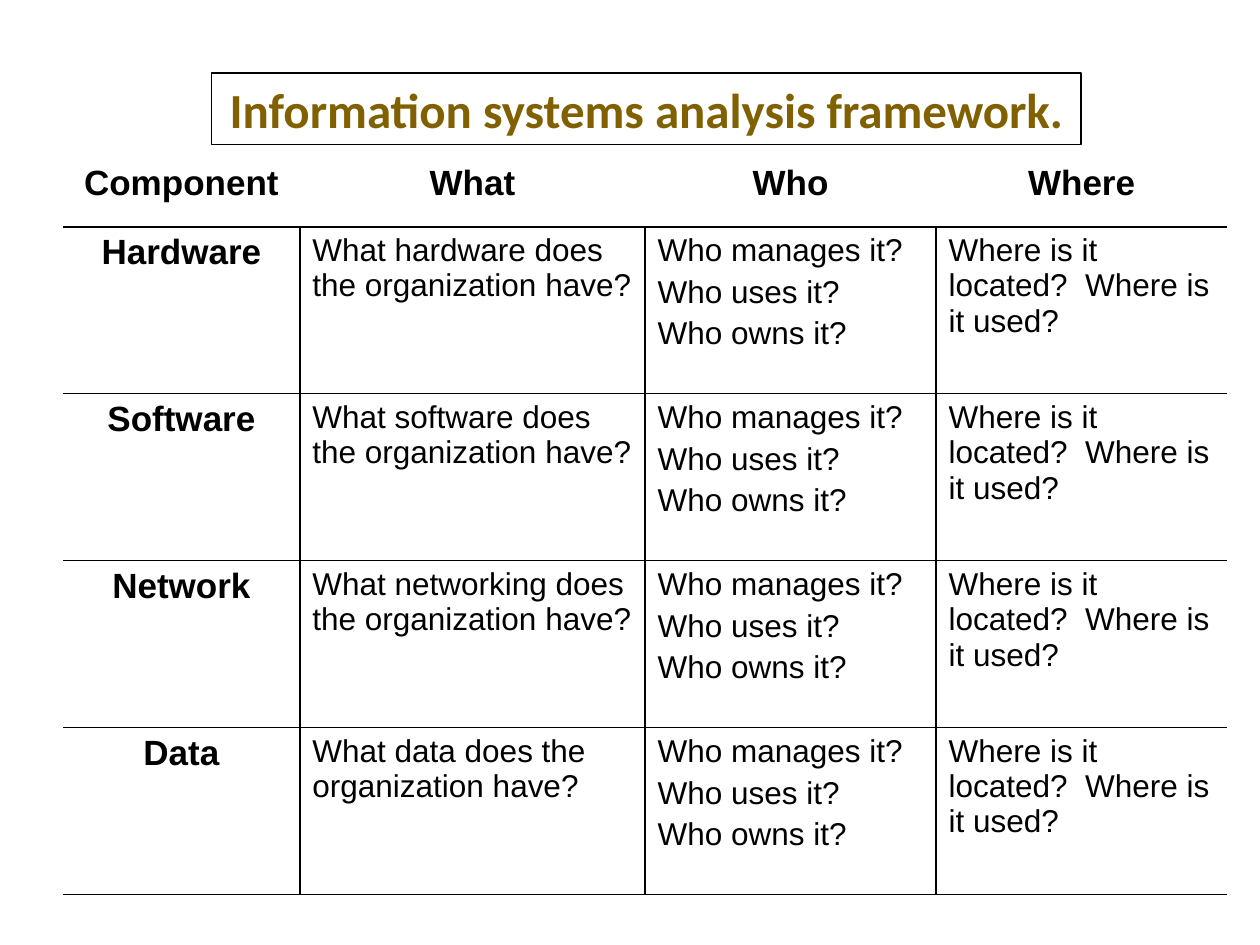
from lxml import etree
from pptx import Presentation
from pptx.dml.color import RGBColor
from pptx.enum import text
from pptx.oxml import ns
from pptx.util import Inches, Pt

COLORS = {"ink": "000000", "title": "806000", "paper": "FFFFFF"}
COLUMN_WIDTHS = [1.88, 2.74, 2.31, 2.31]
HEADER_HEIGHT, ROW_HEIGHT = 0.55, 1.325
HEADINGS = ["Component", "What", "Who", "Where"]
COMPONENTS = {"Hardware": "hardware", "Software": "software",
              "Network": "networking", "Data": "data"}
WHO = ["Who manages it?", "Who uses it?", "Who owns it?"]
WHERE = ["Where is it located?  Where is it used?"]


def set_border(cell, side, visible):
    """Draw or suppress one side (L, R, T or B) of a cell."""
    line = etree.SubElement(cell._tc.get_or_add_tcPr(), ns.qn(f"a:ln{side}"), w=str(Pt(1)))
    if visible:
        fill = etree.SubElement(line, ns.qn("a:solidFill"))
        etree.SubElement(fill, ns.qn("a:srgbClr"), val=COLORS["ink"])
    else:
        etree.SubElement(line, ns.qn("a:noFill"))


deck = Presentation()
deck.slide_width, deck.slide_height = Inches(10), Inches(7.5)
page = deck.slides.add_slide(deck.slide_layouts[5])
page.background.fill.solid()
page.background.fill.fore_color.rgb = RGBColor.from_string(COLORS["paper"])

rows = [[[heading] for heading in HEADINGS]]
for component, subject in COMPONENTS.items():
    rows.append([[component], [f"What {subject} does the organization have?"], WHO, WHERE])

frame = page.shapes.add_table(
    len(rows), len(HEADINGS), Inches(0.5), Inches(1.25),
    Inches(sum(COLUMN_WIDTHS)), Inches(HEADER_HEIGHT + ROW_HEIGHT * len(COMPONENTS)))
table = frame.table
table.first_row = table.horz_banding = False
for column, width in zip(table.columns, COLUMN_WIDTHS):
    column.width = Inches(width)

for r, row in enumerate(rows):
    table.rows[r].height = Inches(ROW_HEIGHT if r else HEADER_HEIGHT)
    for c, lines in enumerate(row):
        cell = table.cell(r, c)
        set_border(cell, "L", r > 0 and c > 0)
        set_border(cell, "R", r > 0 and c < len(HEADINGS) - 1)
        set_border(cell, "T", r > 0)
        set_border(cell, "B", True)
        cell.fill.background()
        cell.text = "\n".join(lines)
        is_label = r == 0 or c == 0
        for i, para in enumerate(cell.text_frame.paragraphs):
            para.alignment = text.PP_ALIGN.CENTER if is_label else text.PP_ALIGN.LEFT
            para.space_before = Pt(3.6 if i else 0)
            para.font.name = "Arial"
            para.font.size = Pt(20 if is_label else 18)
            para.font.bold = is_label
            para.font.color.rgb = RGBColor.from_string(COLORS["ink"])

title = page.shapes.title
title.left, title.top = Inches(1.68), Inches(0.58)
title.width, title.height = Inches(6.9), Inches(0.57)
title.line.color.rgb = RGBColor.from_string(COLORS["ink"])
title.line.width = Pt(0.75)
title.text_frame.text = "Information systems analysis framework."
title.text_frame.word_wrap = False
title.text_frame.auto_size = text.MSO_AUTO_SIZE.NONE
title.text_frame.vertical_anchor = text.MSO_ANCHOR.MIDDLE
para = title.text_frame.paragraphs[0]
para.alignment = text.PP_ALIGN.CENTER
para.font.name = "Calibri"
para.font.size = Pt(28)
para.font.bold = True
para.font.color.rgb = RGBColor.from_string(COLORS["title"])

deck.save("out.pptx")
